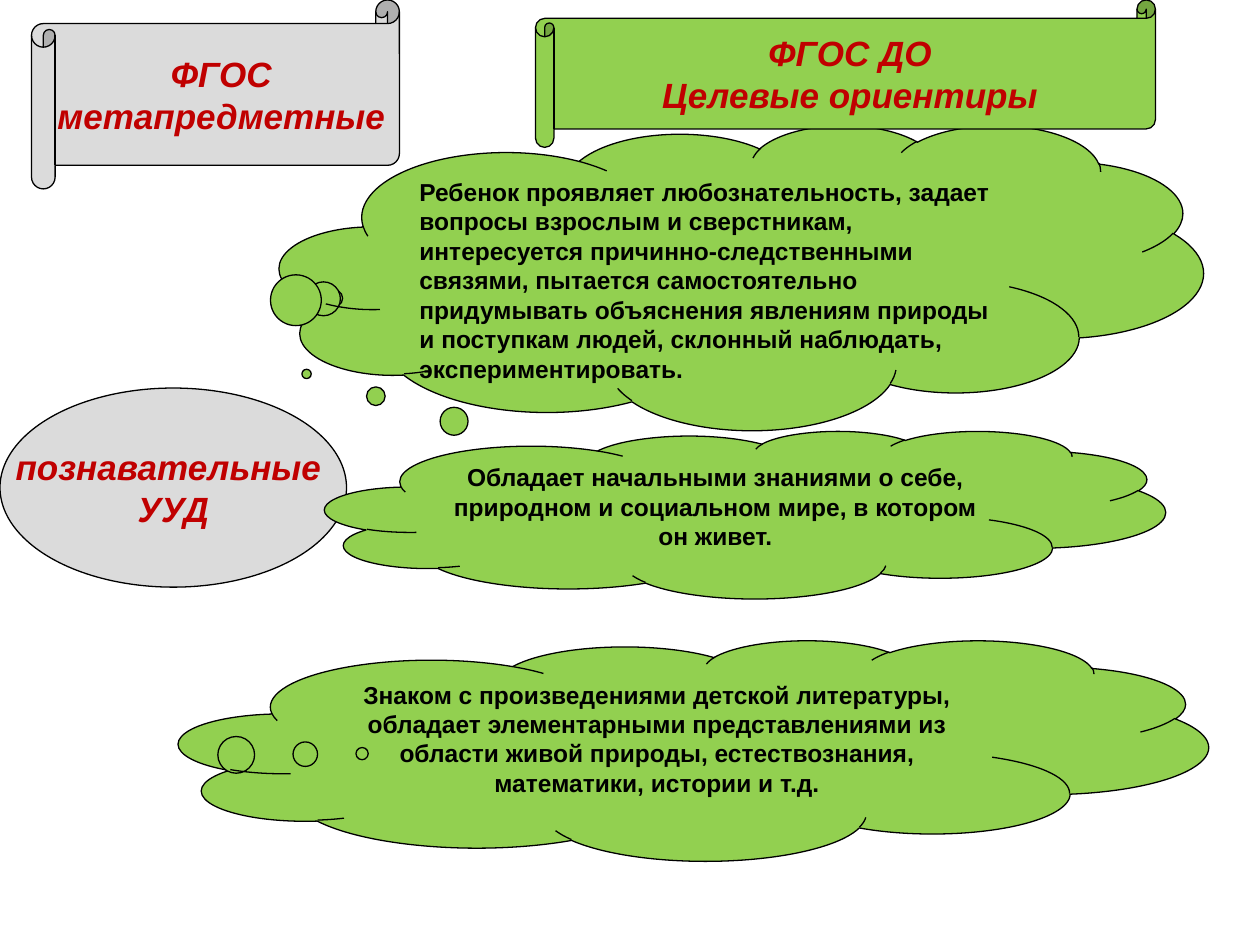
from pptx import Presentation
from pptx.dml.color import RGBColor
from pptx.enum.shapes import MSO_SHAPE as Shape
from pptx.enum.text import MSO_ANCHOR as Anchor, PP_ALIGN as Align
from pptx.util import Inches, Pt

GREEN = RGBColor(0x92, 0xD0, 0x50)
GRAY = RGBColor(0xDB, 0xDB, 0xDB)
RED = RGBColor(0xC0, 0x00, 0x00)
BLACK = RGBColor(0x00, 0x00, 0x00)


class SlideBuilder:
    font_name = "Arial"
    heading_size = Pt(20)
    body_size = Pt(14)
    line_width = Pt(0.75)

    def __init__(self, slide):
        self.slide = slide

    def add_outlined(self, kind, box, fill, adjustments=()):
        shape = self.slide.shapes.add_shape(kind, *map(Inches, box))
        shape.shadow.inherit = False
        shape.fill.solid()
        shape.fill.fore_color.rgb = fill
        shape.line.color.rgb = BLACK
        shape.line.width = self.line_width
        for index, value in enumerate(adjustments):
            shape.adjustments[index] = value
        return shape

    def set_text(self, shape, lines, size, color, align, italic=False):
        frame = shape.text_frame
        frame.text = "\n".join(lines)
        for paragraph in frame.paragraphs:
            paragraph.alignment = align
            font = paragraph.font
            font.name = self.font_name
            font.size = size
            font.bold = True
            font.italic = italic
            font.color.rgb = color

    def heading(self, kind, box, fill, lines, adjustments=()):
        shape = self.add_outlined(kind, box, fill, adjustments)
        shape.text_frame.word_wrap = False
        shape.text_frame.vertical_anchor = Anchor.MIDDLE
        self.set_text(shape, lines, self.heading_size, RED, Align.CENTER, italic=True)

    def scroll(self, box, fill, lines):
        self.heading(Shape.HORIZONTAL_SCROLL, box, fill, lines, [0.125])

    def ellipse(self, box, fill, lines):
        self.heading(Shape.OVAL, box, fill, lines)

    def cloud(self, box, pointer, text, align=Align.CENTER):
        shape = self.add_outlined(Shape.CLOUD_CALLOUT, box, GREEN, pointer)
        shape.text_frame.word_wrap = True
        shape.text_frame.vertical_anchor = Anchor.TOP
        self.set_text(shape, [text], self.body_size, BLACK, align)


def main():
    presentation = Presentation()
    presentation.slide_width = Inches(10)
    presentation.slide_height = Inches(7.5)
    builder = SlideBuilder(presentation.slides.add_slide(presentation.slide_layouts[6]))

    builder.cloud(
        (1.42, 5.08, 8.17, 1.75), (-0.322, 0.015),
        "Знаком с произведениями детской литературы, обладает элементарными "
        "представлениями из области живой природы, естествознания, "
        "математики, истории и т.д.",
    )
    builder.cloud(
        (2.22, 0.99, 7.33, 2.42), (-0.441, 0.069),
        "Ребенок проявляет любознательность, задает вопросы взрослым и "
        "сверстникам, интересуется причинно-следственными связями, пытается "
        "самостоятельно придумывать объяснения явлениям природы и поступкам "
        "людей, склонный наблюдать, экспериментировать.",
        Align.LEFT,
    )
    builder.ellipse((0, 3.08, 2.75, 1.58), GRAY, ["познавательные ", "УУД"])
    builder.scroll((0.25, 0, 2.92, 1.5), GRAY, ["ФГОС", "метапредметные"])
    builder.scroll((4.25, 0, 4.92, 1.17), GREEN, ["ФГОС ДО", "Целевые ориентиры"])
    builder.cloud(
        (2.58, 3.42, 6.67, 1.33), (-0.522, -0.84),
        "Обладает начальными знаниями о себе, природном и социальном мире, "
        "в котором он живет.",
    )

    presentation.save("out.pptx")


if __name__ == "__main__":
    main()
